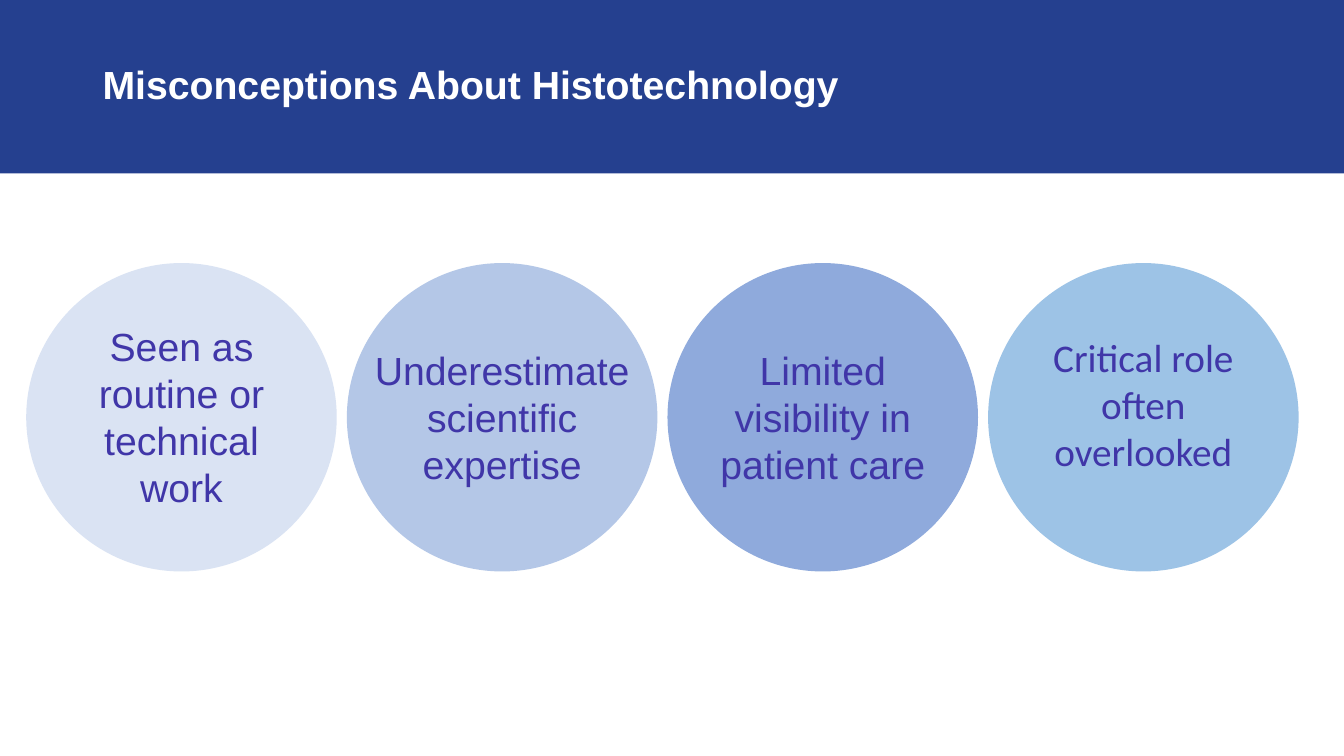
import dataclasses

import pptx
import pptx.dml.color
import pptx.enum.shapes
import pptx.enum.text
import pptx.util

Inches = pptx.util.Inches
Pt = pptx.util.Pt
RGB = pptx.dml.color.RGBColor.from_string
ALIGN = pptx.enum.text.PP_ALIGN
ANCHOR = pptx.enum.text.MSO_ANCHOR
AUTO_SIZE = pptx.enum.text.MSO_AUTO_SIZE
SHAPE = pptx.enum.shapes.MSO_SHAPE


@dataclasses.dataclass(frozen=True)
class Theme:
    banner: str = "25408F"
    title: str = "FFFFFF"
    statement: str = "4036A8"
    size: int = 28
    font: str = "Arial"
    last_font: str = "Calibri"


THEME = Theme()

# Wording, circle fill, text width, text height, text shift down, font
MISCONCEPTIONS = [
    ("Seen as routine or technical work", "DAE3F3", 2.56, 1.99, 0, THEME.font),
    ("Underestimate scientific expertise", "B4C7E7", 2.78, 1.51, 0, THEME.font),
    ("Limited visibility in patient care", "8FAADC", 2.78, 1.51, 0, THEME.font),
    ("Critical role often overlooked", "9DC3E6", 2.78, 1.51, -0.13, THEME.last_font),
]


def add_filled(slide, kind, box, color):
    filled = slide.shapes.add_shape(kind, *map(Inches, box))
    filled.shadow.inherit = False
    filled.fill.solid()
    filled.fill.fore_color.rgb = RGB(color)
    filled.line.fill.background()


def add_words(slide, box, words, color, frame_format, paragraph_format, font_format):
    frame = slide.shapes.add_textbox(*map(Inches, box)).text_frame
    paragraph = frame.paragraphs[0]
    run = paragraph.add_run()
    run.text = words
    run.font.color.rgb = RGB(color)
    for target, values in (
        (frame, {"word_wrap": True, **frame_format}),
        (paragraph, paragraph_format),
        (run.font, {"size": Pt(THEME.size), **font_format}),
    ):
        for name, value in values.items():
            setattr(target, name, value)


def add_banner(slide, box):
    left, top, width, height = box
    add_filled(slide, SHAPE.RECTANGLE, box, THEME.banner)
    add_words(
        slide, (left + 0.92, top + 0.14, width - 1.83, height - 0.27),
        "Misconceptions About Histotechnology", THEME.title,
        {"vertical_anchor": ANCHOR.MIDDLE},
        {"line_spacing": 0.9},
        {"name": THEME.font, "bold": True},
    )


def add_circles(slide, box, gap=0.1):
    left, top, width, height = box
    count = len(MISCONCEPTIONS)
    diameter = (width - gap * (count - 1)) / count
    lefts = [left + i * (diameter + gap) for i in range(count)]

    # Circles behind
    for circle_left, (_, fill, *_) in zip(lefts, MISCONCEPTIONS):
        add_filled(slide, SHAPE.OVAL, (circle_left, top, diameter, height), fill)

    # Statements centred on their circles
    for circle_left, (words, _, text_width, text_height, shift, font) in zip(
        lefts, MISCONCEPTIONS
    ):
        text_left = circle_left + (diameter - text_width) / 2
        text_top = top + (height - text_height) / 2 + shift
        add_words(
            slide, (text_left, text_top, text_width, text_height),
            words, THEME.statement,
            {"auto_size": AUTO_SIZE.SHAPE_TO_FIT_TEXT},
            {"alignment": ALIGN.CENTER},
            {"name": font},
        )


def main():
    deck = pptx.Presentation()
    deck.slide_width, deck.slide_height = Inches(13.33), Inches(7.5)
    slide = deck.slides.add_slide(deck.slide_layouts[6])
    add_banner(slide, (0, 0, 13.33, 1.72))
    add_circles(slide, (0.26, 2.61, 12.62, 3.06))
    deck.save("out.pptx")


if __name__ == "__main__":
    main()
